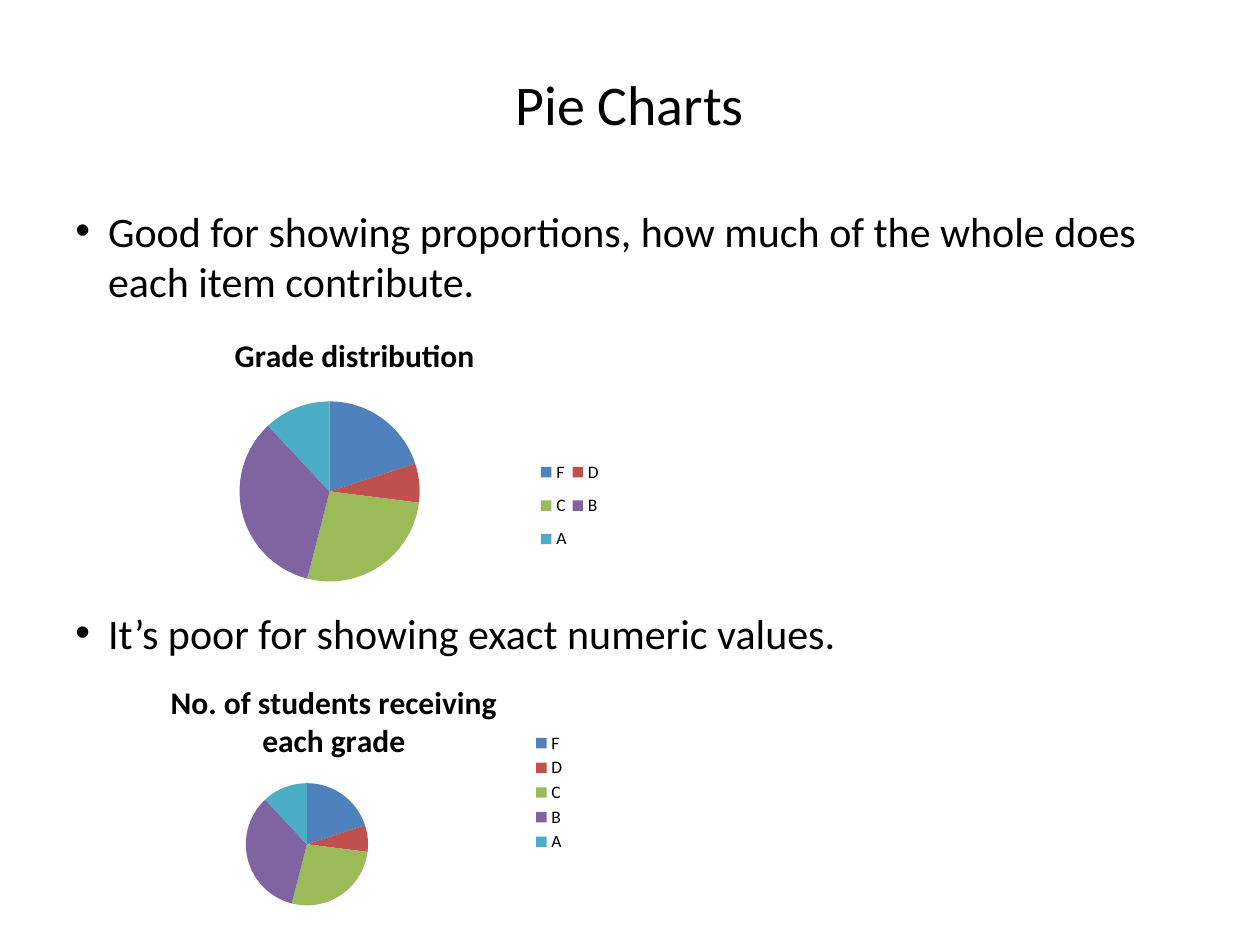
from typing import NamedTuple, Optional

import pptx
import pptx.chart.data
import pptx.dml.color
import pptx.enum.chart
import pptx.enum.text
import pptx.oxml
import pptx.oxml.ns
import pptx.util
from pptx.util import Inches, Pt

RGBColor = pptx.dml.color.RGBColor
FONT = "Calibri"
BLACK = RGBColor(0x00, 0x00, 0x00)
GRADE_COLORS = (
    RGBColor(0x4F, 0x81, 0xBD),
    RGBColor(0xC0, 0x50, 0x4D),
    RGBColor(0x9B, 0xBB, 0x59),
    RGBColor(0x80, 0x64, 0xA2),
    RGBColor(0x4B, 0xAC, 0xC6),
)
GRADES = ("F", "D", "C", "B", "A")
SHARES = (20, 7, 27, 34, 12)
BULLET_INDENT = Inches(0.26)


class Box(NamedTuple):
    left: float
    top: float
    width: float
    height: float


class PieChart(NamedTuple):
    title: str
    box: Box
    plot: Box  # fractions of the chart
    legend: Optional[Box] = None  # fractions of the chart


class Bullet(NamedTuple):
    text: str
    space_before: float


TITLE_BOX = Box(0.5, 0.3, 9, 1.03)
BODY_BOX = Box(0.5, 1.58, 9, 5.5)
BULLETS = (
    Bullet("Good for showing proportions, how much of the whole does each item contribute.", 0),
    Bullet("It’s poor for showing exact numeric values.", 172),
)
PIE_CHARTS = (
    PieChart("Grade distribution", Box(0.83, 2.5, 3.97, 2.26),
             Box(0.27, 0.3, 0.36, 0.64), Box(0.86, 0.47, 0.14, 0.4)),
    PieChart("No. of students receiving each grade", Box(0.71, 5.26, 3.88, 2.06),
             Box(0.32, 0.46, 0.25, 0.48)),
)


def style_font(font: pptx.text.text.Font, size: float, bold: bool = False) -> None:
    font.name = FONT
    font.size = Pt(size)
    font.bold = bold
    font.color.rgb = BLACK


def add_text_box(slide: pptx.slide.Slide, box: Box) -> pptx.text.text.TextFrame:
    text_frame = slide.shapes.add_textbox(*map(Inches, box)).text_frame
    text_frame.word_wrap = True
    return text_frame


def add_title(slide: pptx.slide.Slide, text: str) -> None:
    text_frame = add_text_box(slide, TITLE_BOX)
    text_frame.vertical_anchor = pptx.enum.text.MSO_ANCHOR.MIDDLE
    text_frame.text = text
    paragraph = text_frame.paragraphs[0]
    paragraph.alignment = pptx.enum.text.PP_ALIGN.CENTER
    style_font(paragraph.runs[0].font, 32)


def add_bullets(slide: pptx.slide.Slide) -> None:
    text_frame = add_text_box(slide, BODY_BOX)
    text_frame.text = "\n".join(bullet.text for bullet in BULLETS)
    for paragraph, bullet in zip(text_frame.paragraphs, BULLETS):
        paragraph.space_before = Pt(bullet.space_before)
        style_font(paragraph.runs[0].font, 24)
        properties = paragraph._p.get_or_add_pPr()
        properties.set("marL", str(BULLET_INDENT))
        properties.set("indent", str(-BULLET_INDENT))
        for tag, name, value in (("a:buFont", "typeface", "Arial"), ("a:buChar", "char", "•")):
            element = pptx.oxml.xmlchemy.OxmlElement(tag)
            element.set(name, value)
            properties.append(element)


def set_layout(parent, box: Box, previous_tag: str, inner: bool = False) -> None:
    """Place a chart part by hand, with its layout right after previous_tag if present."""
    ns = pptx.oxml.ns.qn
    for old_layout in parent.findall(ns("c:layout")):
        parent.remove(old_layout)
    layout = pptx.oxml.xmlchemy.OxmlElement("c:layout")
    manual = pptx.oxml.xmlchemy.OxmlElement("c:manualLayout")
    layout.append(manual)
    settings = [("layoutTarget", "inner")] if inner else []
    settings += [("xMode", "edge"), ("yMode", "edge"), *zip("xywh", map(str, box))]
    for tag, value in settings:
        element = pptx.oxml.xmlchemy.OxmlElement(f"c:{tag}")
        element.set("val", value)
        manual.append(element)
    previous = parent.find(ns(previous_tag))
    parent.insert(0 if previous is None else parent.index(previous) + 1, layout)


def add_pie_chart(slide: pptx.slide.Slide, pie: PieChart) -> None:
    data = pptx.chart.data.CategoryChartData()
    data.categories = GRADES
    data.add_series("Series 1", SHARES)
    chart = slide.shapes.add_chart(
        pptx.enum.chart.XL_CHART_TYPE.PIE, *map(Inches, pie.box), data
    ).chart
    style_font(chart.font, 10)

    chart.has_title = True
    title_frame = chart.chart_title.text_frame
    title_frame.text = pie.title
    style_font(title_frame.paragraphs[0].runs[0].font, 18, bold=True)
    chart.chart_title.include_in_layout = False

    chart.has_legend = True
    chart.legend.position = pptx.enum.chart.XL_LEGEND_POSITION.RIGHT
    chart.legend.include_in_layout = False
    style_font(chart.legend.font, 10)

    plot = chart.plots[0]
    plot.vary_by_categories = True
    for index, color in enumerate(GRADE_COLORS):
        fill = plot.series[0].points[index].format.fill
        fill.solid()
        fill.fore_color.rgb = color

    plot_area = chart._chartSpace.chart.plotArea
    set_layout(plot_area, pie.plot, "c:layout", inner=True)
    if pie.legend:
        set_layout(chart.legend._element, pie.legend, "c:legendPos")


def main() -> None:
    presentation = pptx.Presentation()
    presentation.slide_width = Inches(10)
    presentation.slide_height = Inches(7.5)
    slide = presentation.slides.add_slide(presentation.slide_layouts[6])
    add_title(slide, "Pie Charts")
    add_bullets(slide)
    for pie in PIE_CHARTS:
        add_pie_chart(slide, pie)
    presentation.save("out.pptx")


if __name__ == "__main__":
    main()
